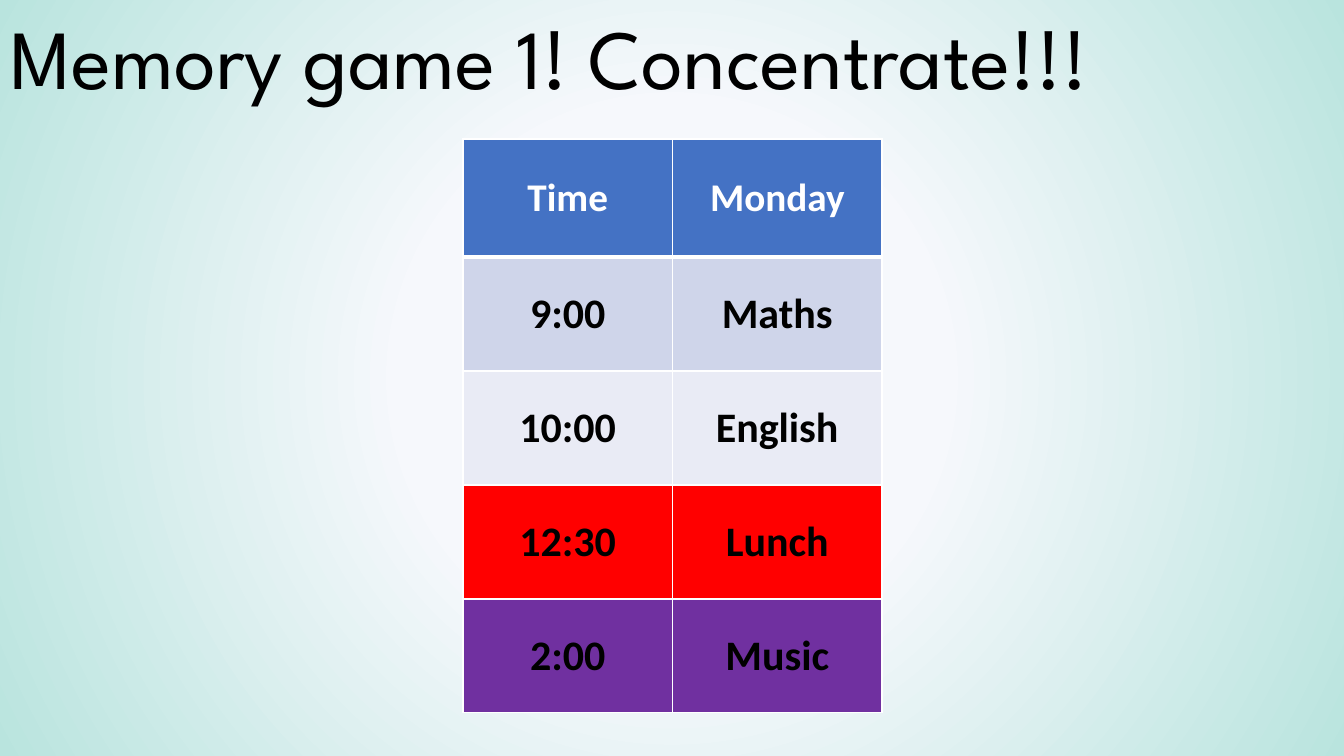
import pptx
import pptx.dml.color
import pptx.enum.text
import pptx.oxml.ns
import pptx.util
from lxml import etree

SLIDE_SIZE = (1344, 756)
EMU_PER_PX = 12192000 / SLIDE_SIZE[0]

THEME = {
    "black": "000000", "white": "FFFFFF", "border": "FFFFFF",
    "background": [(0.35, "F6F8FC"), (1, "B9E4DE")],
    "title_font": "League Spartan", "table_font": "Calibri",
    "title_size": 60, "header_size": 28, "body_size": 30,
    "thin": 1, "thick": 3,
}

# Each row: time, lesson, fill
TIMETABLE = [
    ("Time", "Monday", "4472C4"),
    ("9:00", "Maths", "CFD5EA"),
    ("10:00", "English", "E9EBF5"),
    ("12:30", "Lunch", "FF0000"),
    ("2:00", "Music", "7030A0"),
]


def px(length):
    return pptx.util.Emu(round(length * EMU_PER_PX))


def rgb(colour):
    return pptx.dml.color.RGBColor.from_string(colour)


def format_font(font, colour, **values):
    for name, value in values.items():
        setattr(font, name, value)
    font.color.rgb = rgb(colour)


def paint_background(slide):
    fill = slide.background.fill
    fill.gradient()
    for stop, (position, colour) in zip(fill.gradient_stops, THEME["background"]):
        stop.position = position
        stop.color.rgb = rgb(colour)
    # Turn the linear gradient into a circular one from the centre
    linear = slide.element.find(".//" + pptx.oxml.ns.qn("a:lin"))
    circle = etree.Element(pptx.oxml.ns.qn("a:path"), path="circle")
    etree.SubElement(circle, pptx.oxml.ns.qn("a:fillToRect"),
                     {side: "50000" for side in "ltrb"})
    linear.getparent().replace(linear, circle)


def add_title(slide, left, top, width, height):
    title = slide.shapes.title
    title.left, title.top, title.width, title.height = map(px, (left, top, width, height))
    frame = title.text_frame
    frame.text = "Memory game 1! Concentrate!!!"
    frame.word_wrap = True
    frame.auto_size = pptx.enum.text.MSO_AUTO_SIZE.SHAPE_TO_FIT_TEXT
    frame.vertical_anchor = pptx.enum.text.MSO_ANCHOR.TOP
    paragraph = frame.paragraphs[0]
    paragraph.alignment = pptx.enum.text.PP_ALIGN.LEFT
    paragraph.line_spacing = 1.0
    format_font(paragraph.runs[0].font, THEME["black"], name=THEME["title_font"],
                size=pptx.util.Pt(THEME["title_size"]))


def add_borders(cell, row):
    widths = {"L": THEME["thin"], "R": THEME["thin"],
              "T": THEME["thick"] if row == 1 else THEME["thin"],
              "B": THEME["thick"] if row == 0 else THEME["thin"]}
    properties = cell._tc.get_or_add_tcPr()
    for side, width in widths.items():
        line = etree.SubElement(properties, pptx.oxml.ns.qn("a:ln" + side),
                                w=str(pptx.util.Pt(width)))
        solid = etree.SubElement(line, pptx.oxml.ns.qn("a:solidFill"))
        etree.SubElement(solid, pptx.oxml.ns.qn("a:srgbClr"), val=THEME["border"])


def fill_cell(cell, row, text, fill):
    add_borders(cell, row)
    cell.fill.solid()
    cell.fill.fore_color.rgb = rgb(fill)
    cell.vertical_anchor = pptx.enum.text.MSO_ANCHOR.MIDDLE
    cell.text = text
    paragraph = cell.text_frame.paragraphs[0]
    paragraph.alignment = pptx.enum.text.PP_ALIGN.CENTER
    colour, size = ("white", "header_size") if row == 0 else ("black", "body_size")
    format_font(paragraph.runs[0].font, THEME[colour], name=THEME["table_font"],
                size=pptx.util.Pt(THEME[size]), bold=True)


def add_timetable(slide, left, top, width, height, header_height):
    body_height = (height - header_height) / (len(TIMETABLE) - 1)
    table = slide.shapes.add_table(len(TIMETABLE), 2, px(left), px(top),
                                   px(width), px(height)).table
    for row, (*texts, fill) in enumerate(TIMETABLE):
        table.rows[row].height = px(body_height if row else header_height)
        for column, text in enumerate(texts):
            fill_cell(table.cell(row, column), row, text, fill)


def main():
    presentation = pptx.Presentation()
    presentation.slide_width, presentation.slide_height = map(px, SLIDE_SIZE)
    slide = presentation.slides.add_slide(presentation.slide_layouts.get_by_name("Title Only"))
    paint_background(slide)
    add_timetable(slide, 463, 139, 419, 574, header_height=118)
    add_title(slide, 0, 0, 1360, 112)
    presentation.save("out.pptx")


if __name__ == "__main__":
    main()
